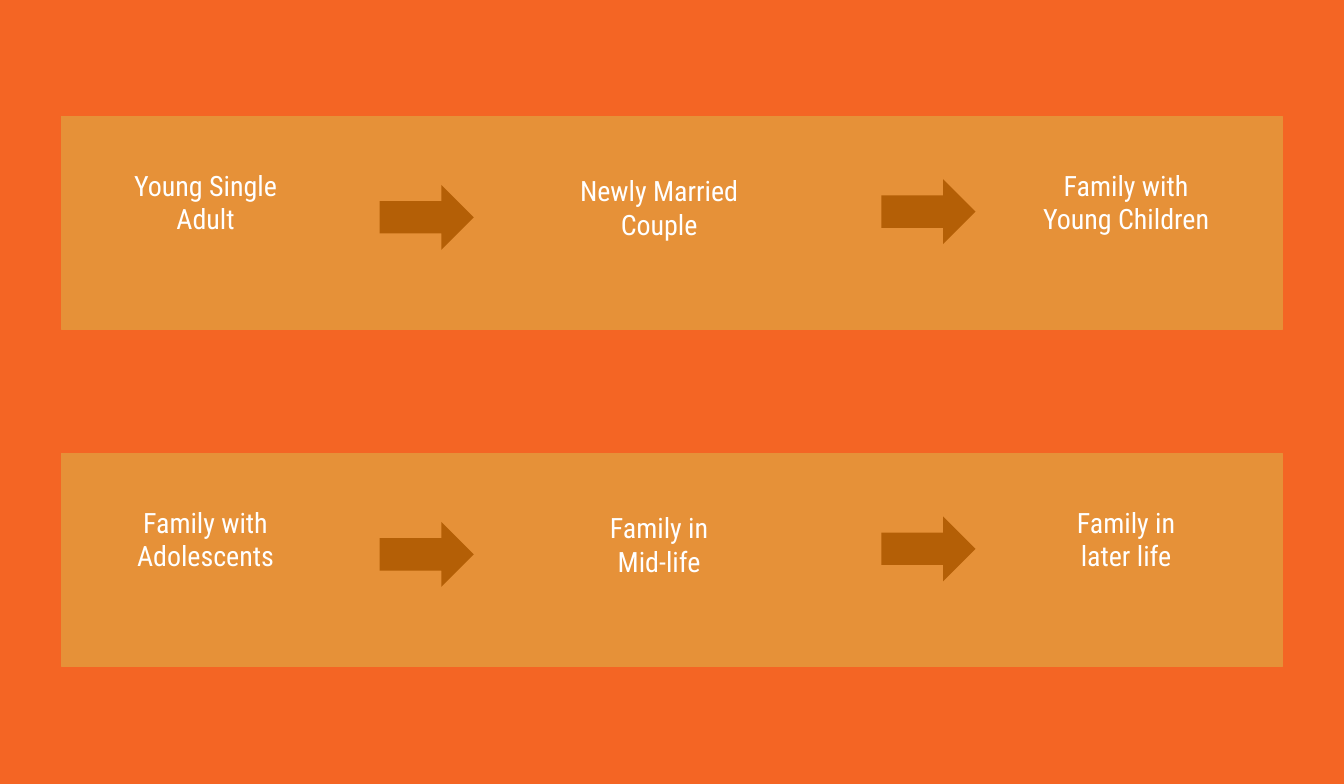
from pptx import Presentation
from pptx.dml.color import RGBColor
from pptx.enum.shapes import MSO_SHAPE
from pptx.enum.text import PP_ALIGN
from pptx.util import Inches, Pt

RECT = MSO_SHAPE.RECTANGLE
ARROW = MSO_SHAPE.RIGHT_ARROW
CENTER = PP_ALIGN.CENTER

COLORS = {"back": "F46524", "band": "E69138", "arrow": "B45F06", "text": "FFFFFF"}
FONT = "Roboto Condensed"
WIDTH, HEIGHT = 12, 7

# Bands: top edge and the three stages of each row
TOP, PITCH = 1.04, 3.01
MARGIN, BAND_H = 0.55, 1.9
ROWS = [
    ["Young Single\vAdult", "Newly Married\nCouple", "Family with\nYoung Children"],
    ["Family with\nAdolescents", "Family in\nMid-life", "Family in\nlater life"],
]

# Columns: left edge and drop below the top of the band
LABELS = [(0.69, 0.36), (4.74, 0.41), (8.91, 0.36)]
ARROWS = [(3.39, 0.61), (7.87, 0.56)]


def add_block(kind, x, y, w, h, color):
    block = slide.shapes.add_shape(kind, Inches(x), Inches(y), Inches(w), Inches(h))
    block.shadow.inherit = False
    block.fill.solid()
    block.fill.fore_color.rgb = RGBColor.from_string(COLORS[color])
    block.line.fill.background()
    return block


def add_label(text, x, y):
    box = slide.shapes.add_textbox(Inches(x), Inches(y), Inches(2.29), Inches(1.38))
    frame = box.text_frame
    frame.word_wrap = True
    frame.margin_left = frame.margin_right = Inches(0.1)
    frame.margin_top = frame.margin_bottom = Inches(0.1)
    frame.text = text
    for para in frame.paragraphs:
        para.alignment = CENTER
        for run in para.runs:
            run.font.name = FONT
            run.font.size = Pt(18)
            run.font.color.rgb = RGBColor.from_string(COLORS["text"])


# Slide and background
deck = Presentation()
deck.slide_width, deck.slide_height = Inches(WIDTH), Inches(HEIGHT)
slide = deck.slides.add_slide(deck.slide_layouts[6])
slide.background.fill.solid()
slide.background.fill.fore_color.rgb = RGBColor.from_string(COLORS["back"])

# One band per row, with its stages and the arrows between them
for row, stages in enumerate(ROWS):
    top = TOP + row * PITCH
    band = add_block(RECT, MARGIN, top, WIDTH - 2 * MARGIN, BAND_H, "band")
    band.line.color.rgb = RGBColor.from_string(COLORS["band"])
    band.line.width = Pt(0.75)
    for stage, (left, drop) in zip(stages, LABELS):
        add_label(stage, left, top + drop)
    for left, drop in ARROWS:
        add_block(ARROW, left, top + drop, 0.84, 0.58, "arrow")

deck.save("out.pptx")
